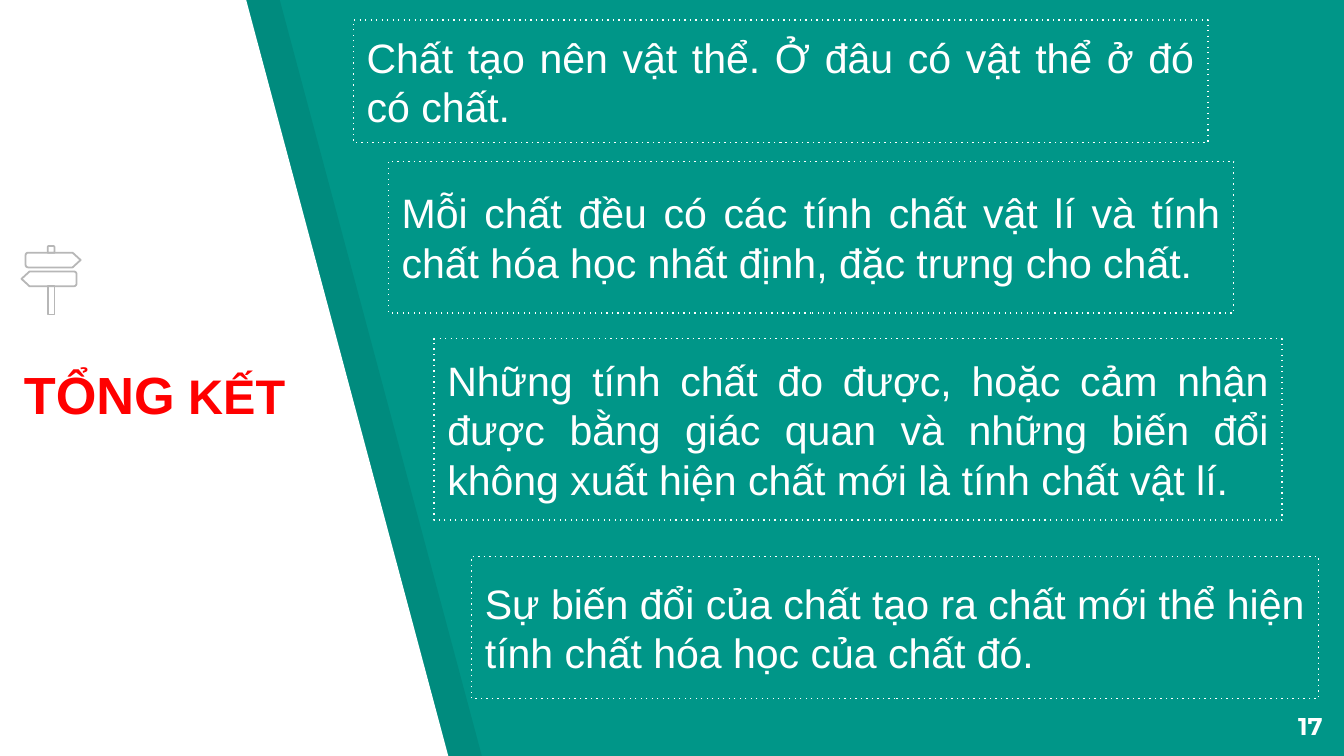
from math import cos, pi, sin

from lxml.etree import SubElement
from pptx import Presentation
from pptx.dml.color import RGBColor
from pptx.enum.shapes import MSO_SHAPE as Shape
from pptx.enum.text import MSO_ANCHOR as Anchor, PP_ALIGN as Align
from pptx.oxml.ns import qn
from pptx.util import Inches, Pt

COLORS = {
    "teal": "009688",
    "white": "FFFFFF",
    "black": "000000",
    "red": "FF0000",
    "gray": "B7B7B7",
}

NOTES = [
    ((2.63, 0.15, 6.36, 0.91),
     "Chất tạo nên vật thể. Ở đâu có vật thể ở đó có chất."),
    ((2.89, 1.2, 6.29, 1.13),
     "Mỗi chất đều có các tính chất vật lí và tính chất hóa học "
     "nhất định, đặc trưng cho chất."),
    ((3.23, 2.52, 6.31, 1.35),
     "Những tính chất đo được, hoặc cảm nhận được bằng giác quan và "
     "những biến đổi không xuất hiện chất mới là tính chất vật lí."),
    ((3.51, 4.14, 6.3, 1.06),
     "Sự biến đổi của chất tạo ra chất mới thể hiện tính chất hóa học "
     "của chất đó."),
]


def color(name):
    return RGBColor.from_string(COLORS[name])


def paint(fill, name):
    fill.solid()
    fill.fore_color.rgb = color(name)


def outline(slide, points):
    spots = [(Inches(x), Inches(y)) for x, y in points]
    pen = slide.shapes.build_freeform(*spots[0])
    pen.add_line_segments(spots[1:], close=True)
    shape = pen.convert_to_shape()
    shape.shadow.inherit = False
    return shape


def frame(shape, anchor):
    text = shape.text_frame
    text.word_wrap = True
    text.vertical_anchor = anchor
    text.margin_left = text.margin_right = Inches(0.1)
    text.margin_top = text.margin_bottom = Inches(0.1)
    return text.paragraphs[0]


def style(font, name, size, ink, bold=False):
    font.name = name
    font.size = Pt(size)
    font.bold = bold
    font.color.rgb = color(ink)


def add_band(slide, box, ink, alpha=None):
    x, y, w, h = box
    band = outline(slide, [(x, y), (x, y + h), (x + w, y + h), (x + w - 1.51, y)])
    paint(band.fill, ink)
    band.line.fill.background()
    if alpha:
        tone = band.fill._xPr.find(qn("a:solidFill"))[0]
        SubElement(tone, qn("a:alpha")).set("val", str(alpha * 1000))


def add_title(slide, box):
    part = frame(slide.shapes.add_textbox(*map(Inches, box)), Anchor.BOTTOM)
    for word, size in (("TỔNG", 28), (" KẾT", 26)):
        run = part.add_run()
        run.text = word
        style(run.font, "Arial", size, "red", True)


def add_note(slide, box, words):
    note = slide.shapes.add_shape(Shape.RECTANGLE, *map(Inches, box))
    note.shadow.inherit = False
    note.fill.background()
    note.line.color.rgb = color("white")
    note.line.width = Pt(0.75)
    edge = note.line._get_or_add_ln()
    SubElement(edge, qn("a:prstDash")).set("val", "dot")
    part = frame(note, Anchor.MIDDLE)
    part.text = words
    part.alignment = Align.JUSTIFY
    style(part.font, "Arial", 22, "white")


def arc(x, y, r, start):
    turns = [start + step * pi / 8 for step in range(5)]
    return [(x + r * cos(t), y + r * sin(t)) for t in turns]


def add_sign(slide, box):
    x, y, w, h = box
    mid = x + w / 2
    tall, wide, tip, r = 0.11, 0.41, 0.06, 0.02

    def board(edge, top, way):
        end = edge + way * wide
        neck = end - way * tip
        low = top + tall
        side = edge + way * r
        curve = arc(0, top + r, r, pi)[::-1] + arc(0, low - r, r, pi / 2)[::-1]
        turn = [(side + way * px, py) for px, py in curve]
        return [(neck, top), *turn, (neck, low), (end, top + tall / 2)]

    left, right = mid - 0.02, mid + 0.03
    bend = 0.01
    cap = arc(left + bend, y + bend, bend, pi)
    cap += arc(right - bend, y + bend, bend, 1.5 * pi)
    parts = [
        board(x + 0.04, y + 0.05, 1),
        board(x + w - 0.03, y + 0.19, -1),
        [(left, y + 0.05), *cap, (right, y + 0.05)],
        [(left, y + 0.3), (left, y + h), (right, y + h), (right, y + 0.3)],
    ]
    for points in parts:
        part = outline(slide, points)
        part.fill.background()
        part.line.color.rgb = color("gray")
        part.line.width = Pt(0.96)


def add_page(slide, box):
    part = frame(slide.shapes.add_textbox(*map(Inches, box)), Anchor.TOP)
    part.text = "17"
    part.alignment = Align.RIGHT
    style(part.font, "Montserrat", 13, "white", True)


def main():
    deck = Presentation()
    deck.slide_width = Inches(10)
    deck.slide_height = deck.slide_width * 9 // 16
    slide = deck.slides.add_slide(deck.slide_layouts[6])
    paint(slide.background.fill, "teal")
    add_band(slide, (0.23, -0.01, 3.36, 5.65), "black", 7)
    add_band(slide, (-0.02, -0.01, 3.36, 5.65), "white")
    add_title(slide, (0.08, 2.73, 2.55, 0.53))
    for box, words in NOTES:
        add_note(slide, box, words)
    add_sign(slide, (0.15, 1.83, 0.45, 0.51))
    add_page(slide, (9.34, 5.19, 0.6, 0.43))
    deck.save("out.pptx")


if __name__ == "__main__":
    main()
